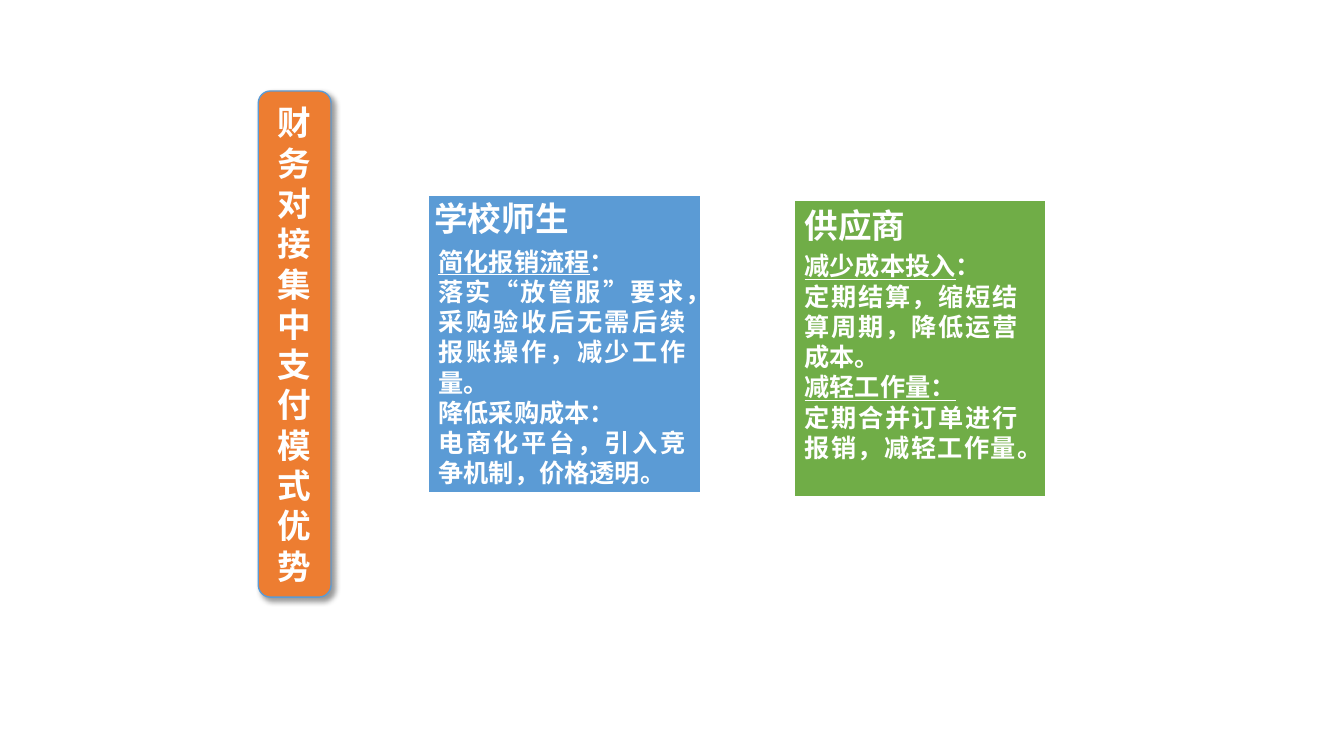
import pptx
import pptx.dml.color
import pptx.enum.shapes
import pptx.enum.text
import pptx.oxml
import pptx.oxml.ns
import pptx.util

Pt = pptx.util.Pt
MSO_SHAPE = pptx.enum.shapes.MSO_SHAPE
PP_ALIGN = pptx.enum.text.PP_ALIGN
MSO_ANCHOR = pptx.enum.text.MSO_ANCHOR
FONT = "Noto Sans CJK SC"
A = pptx.oxml.ns.nsdecls("a")

prs = pptx.Presentation()
prs.slide_width, prs.slide_height = Pt(960), Pt(540)
s = prs.slides.add_slide(prs.slide_layouts.get_by_name("Comparison"))
holders = {ph.placeholder_format.idx: ph for ph in s.placeholders}


def add_panel(kind, box, fill, line, width):
    sp = s.shapes.add_shape(kind, *map(Pt, box))
    sp.shadow.inherit = False
    sp.fill.solid()
    sp.fill.fore_color.rgb = pptx.dml.color.RGBColor.from_string(fill)
    sp.line.color.rgb = pptx.dml.color.RGBColor.from_string(line)
    sp.line.width = Pt(width)
    return sp


def fill_placeholder(idx, box, lines, size, align, anchor):
    """Each line is a list of (text, underlined) pieces."""
    sp = holders[idx]
    sp.left, sp.top, sp.width, sp.height = map(Pt, box)
    s.shapes._spTree.append(sp._element)  # in front of the panels
    tf = sp.text_frame
    tf.word_wrap = True
    tf.auto_size = pptx.enum.text.MSO_AUTO_SIZE.NONE
    tf.vertical_anchor = anchor
    for i, pieces in enumerate(lines):
        p = tf.paragraphs[0] if i == 0 else tf.add_paragraph()
        pPr = p._p.get_or_add_pPr()
        pPr.set("marL", "0")
        pPr.set("indent", "0")
        pPr.append(pptx.oxml.parse_xml(f"<a:buNone {A}/>"))
        p.alignment = align
        p.space_before = Pt(0)
        p.line_spacing = Pt(size * 1.2)
        for text, underlined in pieces:
            r = p.add_run()
            r.text = text
            r.font.size = Pt(size)
            r.font.bold = True
            r.font.underline = underlined
            r.font.color.rgb = pptx.dml.color.RGBColor.from_string("FFFFFF")
            r.font.name = FONT
            r.font._element.append(pptx.oxml.parse_xml(f'<a:ea {A} typeface="{FONT}"/>'))


# Vertical title banner with its shadow
banner = (184.5, 65, 52, 361.5)
sp = add_panel(MSO_SHAPE.ROUNDED_RECTANGLE, banner, "ED7D31", "5B9BD5", 1)
effects = sp._element.spPr.find(pptx.oxml.ns.qn("a:effectLst"))
effects.append(pptx.oxml.parse_xml(
    f'<a:outerShdw {A} blurRad="{Pt(4)}" dist="{Pt(3)}" dir="2700000" algn="tl" rotWithShape="0">'
    '<a:srgbClr val="000000"><a:alpha val="40000"/></a:srgbClr></a:outerShdw>'))
fill_placeholder(0, banner, [[("财务对接集中支付模式优势", False)]], 24,
                 PP_ALIGN.CENTER, MSO_ANCHOR.MIDDLE)

# Benefit cards: panel, heading, body
cards = [
    ("5B9BD5", (306, 139.5, 194.5, 212.5),
     "学校师生", (303, 137.5, 112.5, 36), (306, 172, 191, 181.5),
     [[("简化报销流程", True), ("：", False)],
      [("落实“放管服”要求，采购验收后无需后续报账操作，减少工作量。", False)],
      [("降低采购成本：", False)],
      [("电商化平台，引入竞争机制，价格透明。", False)]]),
    ("70AD47", (567.5, 142.5, 180, 212.5),
     "供应商", (567.5, 142.5, 112.5, 36), (567.5, 175.5, 166.5, 181.5),
     [[("减少成本投入", True), ("：", False)],
      [("定期结算，缩短结算周期，降低运营成本。", False)],
      [("减轻工作量：", True)],
      [("定期合并订单进行报销，减轻工作量。", False)]]),
]
for i, (colour, panel, heading, heading_box, body_box, body) in enumerate(cards):
    add_panel(MSO_SHAPE.FLOWCHART_PROCESS, panel, colour, "FFFFFF", 1.5)
    fill_placeholder(2 * i + 1, heading_box, [[(heading, False)]], 24,
                     PP_ALIGN.JUSTIFY, MSO_ANCHOR.TOP)
    fill_placeholder(2 * i + 2, body_box, body, 18, PP_ALIGN.JUSTIFY, MSO_ANCHOR.TOP)

prs.save("out.pptx")
